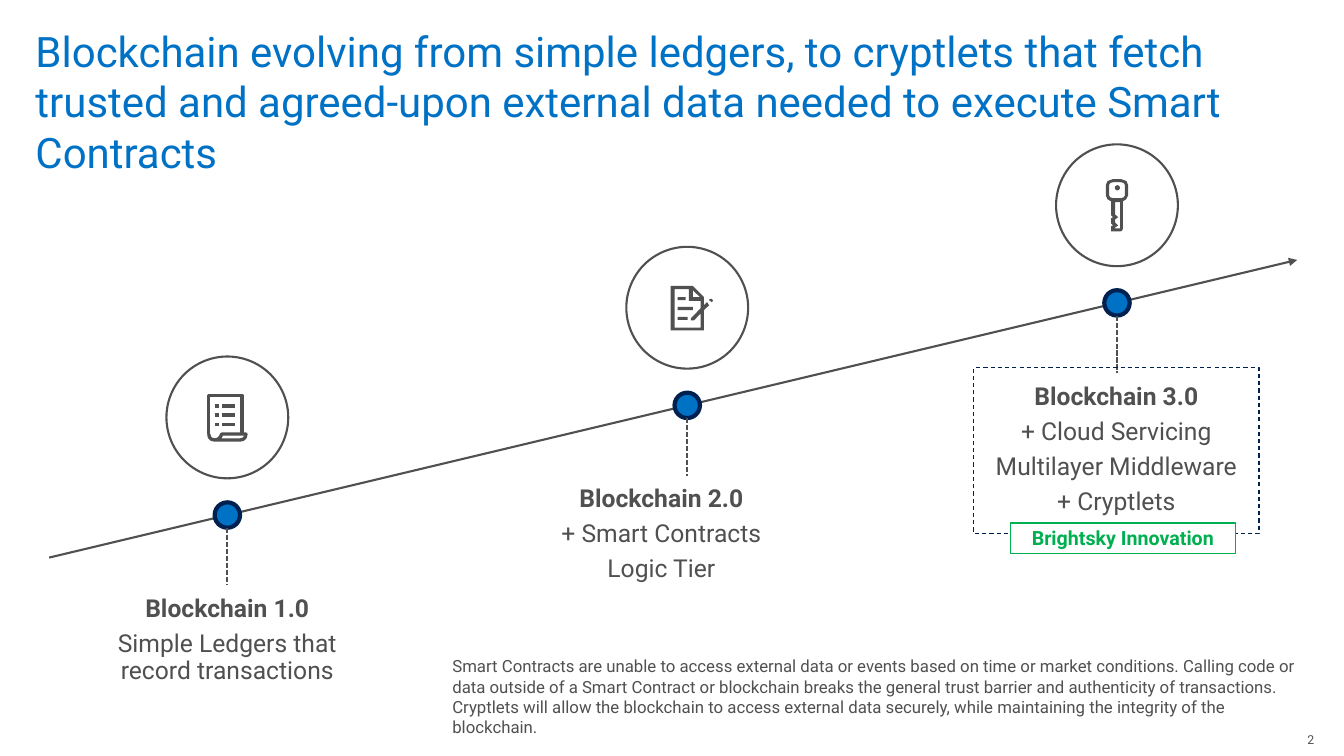
"""Build the slide on the three stages of blockchain evolution."""
from dataclasses import dataclass

from lxml import etree
from pptx import Presentation
from pptx import util as u
from pptx.dml.color import RGBColor
from pptx.enum import dml, shapes, text
from pptx.oxml import ns


@dataclass(frozen=True)
class Theme:
    font: str = "Roboto"
    blue: str = "0072C6"
    navy: str = "002050"
    grey: str = "505050"
    green: str = "00B050"
    white: str = "FFFFFF"
    title: float = 30
    caption: float = 17.6
    badge: float = 14
    note: float = 12
    number: float = 8.8


theme = Theme()
deck = Presentation()
deck.slide_width, deck.slide_height = u.Cm(33.87), u.Cm(19.05)
slide = deck.slides.add_slide(deck.slide_layouts[5])


def connect(start, end, width, dash=None):
    rule = slide.shapes.add_connector(
        shapes.MSO_CONNECTOR.STRAIGHT, *map(u.Cm, (*start, *end)))
    rule.line.color.rgb = RGBColor.from_string(theme.grey)
    rule.line.width = u.Pt(width)
    if dash:
        rule.line.dash_style = dash
    etree.SubElement(rule._element.spPr, ns.qn("a:effectLst"))
    return rule


def solid(kind, centre, width, height, fill=None, outline=None, weight=1.5):
    left, top = centre[0] - width / 2, centre[1] - height / 2
    figure = slide.shapes.add_shape(kind, *map(u.Cm, (left, top, width, height)))
    figure.shadow.inherit = False
    if fill:
        figure.fill.solid()
        figure.fill.fore_color.rgb = RGBColor.from_string(fill)
    else:
        figure.fill.background()
    if outline:
        figure.line.color.rgb = RGBColor.from_string(outline)
        figure.line.width = u.Pt(weight)
    else:
        figure.line.fill.background()
    return figure


OVAL, RECT = shapes.MSO_SHAPE.OVAL, shapes.MSO_SHAPE.RECTANGLE
LEFT, CENTER, RIGHT = text.PP_ALIGN.LEFT, text.PP_ALIGN.CENTER, text.PP_ALIGN.RIGHT

headline = slide.shapes.title
headline.left, headline.top = u.Cm(0.64), u.Cm(0.51)
headline.width, headline.height = u.Cm(32.05), u.Cm(2.54)
headline.text_frame.text = (
    "Blockchain evolving from simple ledgers, to cryptlets that fetch trusted and "
    "agreed-upon external data needed to execute Smart Contracts")
headline.text_frame.vertical_anchor = text.MSO_ANCHOR.TOP

explanation = slide.shapes.add_textbox(u.Cm(11.15), u.Cm(16.41), u.Cm(22.15), u.Cm(1.8))
explanation.text_frame.text = (
    "Smart Contracts are unable to access external data or events based on time or "
    "market conditions. Calling code or data outside of a Smart Contract or blockchain "
    "breaks the general trust barrier and authenticity of transactions. Cryptlets will "
    "allow the blockchain to access external data securely, while maintaining the "
    "integrity of the blockchain.")

page = slide.shapes.add_textbox(u.Cm(32.56), u.Cm(18.44), u.Cm(0.56), u.Cm(0.36))
page.text_frame.text = "2"
page.text_frame.margin_left = page.text_frame.margin_right = 0
page.text_frame.margin_top = page.text_frame.margin_bottom = 0

trend_start, trend_end = (1.24, 14.05), (32.69, 6.55)
slope = (trend_end[1] - trend_start[1]) / (trend_end[0] - trend_start[0])
trend = connect(trend_start, trend_end, 1.5)
etree.SubElement(trend.line._get_or_add_ln(), ns.qn("a:tailEnd"), type="triangle")

milestones = [
    (5.73, 2.39, 6.68, 3.05, ["Blockchain 1.0", "Simple Ledgers that\vrecord transactions"]),
    (17.32, 12.29, 8.76, 3.25, ["Blockchain 2.0", "+ Smart Contracts", "Logic Tier"]),
    (28.15, 24.54, 7.19, 4.17, ["Blockchain 3.0", "+ Cloud Servicing",
                                "Multilayer Middleware", "+ Cryptlets"]),
]
icon_centres, captions = [], []
for x, left, width, height, lines in milestones:
    y = trend_start[1] + slope * (x - trend_start[0])
    solid(OVAL, (x, y), 0.64, 0.64, theme.blue, theme.navy, 3)
    connect((x, y + 0.32), (x, y + 1.77), 1.25, dml.MSO_LINE.SQUARE_DOT)
    icon_centres.append((x, y - 2.46))
    solid(OVAL, icon_centres[-1], 3.07, 3.07, outline=theme.grey)
    caption = slide.shapes.add_textbox(*map(u.Cm, (left, y + 1.64, width, height)))
    frame = caption.text_frame
    frame.text = "\n".join(lines)
    frame.margin_left = frame.margin_right = u.Cm(0.51)
    frame.margin_top = frame.margin_bottom = u.Cm(0.41)
    captions.append(caption)

latest = captions[-1]
latest.line.color.rgb = RGBColor.from_string(theme.navy)
latest.line.width = u.Pt(0.75)
latest.line.dash_style = dml.MSO_LINE.DASH
innovation = solid(RECT, (28.3, 13.56), 5.66, 0.76, theme.white, theme.green, 0.75)
innovation.text_frame.text = "Brightsky Innovation"
innovation.text_frame.vertical_anchor = text.MSO_ANCHOR.MIDDLE

ledger, contract, key = icon_centres
ledger_sheet = [(-47, 42), (-47, -55), (37, -55), (37, 42)]
ledger_curl = [(-47, 42), (-45, 50), (-40, 55), (-32, 57), (-24, 55), (-18, 50), (-14, 42),
               (47, 42), (45, 50), (40, 55), (32, 57), (-32, 57)]
contract_page = [(50, -14), (42, -6), (42, -27), (14, -55), (-42, -55), (-42, 57),
                 (42, 57), (42, 6), (55, -6)]
contract_fold = [(32, -27), (14, -27), (14, -44)]
contract_inside = [(34, 50), (-32, 50), (-32, -47), (4, -47), (4, -17), (34, -17),
                   (34, 1), (9, 27), (9, 32), (17, 32), (34, 14)]
pen_end = [(57, -22), (55, -19), (62, -14), (65, -18), (62, -22)]
key_outside = [(-15, 66), (8, 66), (13, 64), (15, 58), (15, -10), (23, -15), (28, -25),
               (28, -51), (24, -61), (10, -66), (-10, -66), (-24, -61), (-28, -51),
               (-28, -25), (-24, -15), (-15, -10), (-15, 25), (-10, 30), (-15, 33),
               (-15, 46), (-10, 51), (-15, 53)]
key_shaft = [(8, 58), (-5, 58), (-5, 56), (3, 51), (-5, 43), (-5, 36), (3, 30),
             (-5, 23), (-5, -8), (8, -8)]
key_head = [(-20, -25), (-20, -51), (-17, -56), (-10, -58), (10, -58), (17, -56),
            (20, -51), (20, -25), (17, -20), (10, -18), (-10, -18), (-17, -20)]

for centre, contours, filled in [
    (ledger, [ledger_sheet], False),
    (ledger, [ledger_curl], False),
    (contract, [contract_page, contract_fold, contract_inside], True),
    (contract, [pen_end], True),
    (key, [key_outside, key_shaft, key_head], True),
]:
    pen = slide.shapes.build_freeform(*contours[0][0], scale=u.Cm(0.01))
    for contour in contours:
        pen.move_to(*contour[0])
        pen.add_line_segments(contour[1:], close=filled)
    glyph = pen.convert_to_shape(*map(u.Cm, centre))
    glyph.shadow.inherit = False
    if filled:
        glyph.fill.solid()
        glyph.fill.fore_color.rgb = RGBColor.from_string(theme.grey)
        glyph.line.fill.background()
    else:
        glyph.fill.background()
        glyph.line.color.rgb = RGBColor.from_string(theme.grey)
        glyph.line.width = u.Pt(2.38)

for row, clause_width in enumerate([0.2, 0.38, 0.25]):
    entry_y = ledger[1] - 0.29 + 0.23 * row
    for start, end in [(-0.32, -0.22), (-0.14, 0.19)]:
        connect((ledger[0] + start, entry_y), (ledger[0] + end, entry_y), 2.38)
    clause = (contract[0] - 0.24 + clause_width / 2, contract[1] - 0.23 + 0.25 * row)
    solid(RECT, clause, clause_width, 0.08, theme.grey)
solid(OVAL, (key[0] + 0.01, key[1] - 0.44), 0.13, 0.13, theme.grey)

for holder, size, colour, align, wrap in [
    (headline, theme.title, theme.blue, LEFT, True),
    (explanation, theme.note, theme.grey, LEFT, True),
    (page, theme.number, theme.grey, RIGHT, False),
    (innovation, theme.badge, theme.green, CENTER, True),
    *((caption, theme.caption, theme.grey, CENTER, False) for caption in captions),
]:
    holder.text_frame.word_wrap = wrap
    holder.text_frame.auto_size = text.MSO_AUTO_SIZE.NONE
    for order, paragraph in enumerate(holder.text_frame.paragraphs):
        paragraph.alignment = align
        if holder in captions:
            paragraph.line_spacing, paragraph.space_after = 0.9, u.Pt(5.9)
        paragraph.font.name, paragraph.font.size = theme.font, u.Pt(size)
        paragraph.font.bold = holder is innovation or (holder in captions and order == 0)
        paragraph.font.color.rgb = RGBColor.from_string(colour)

deck.save("out.pptx")
